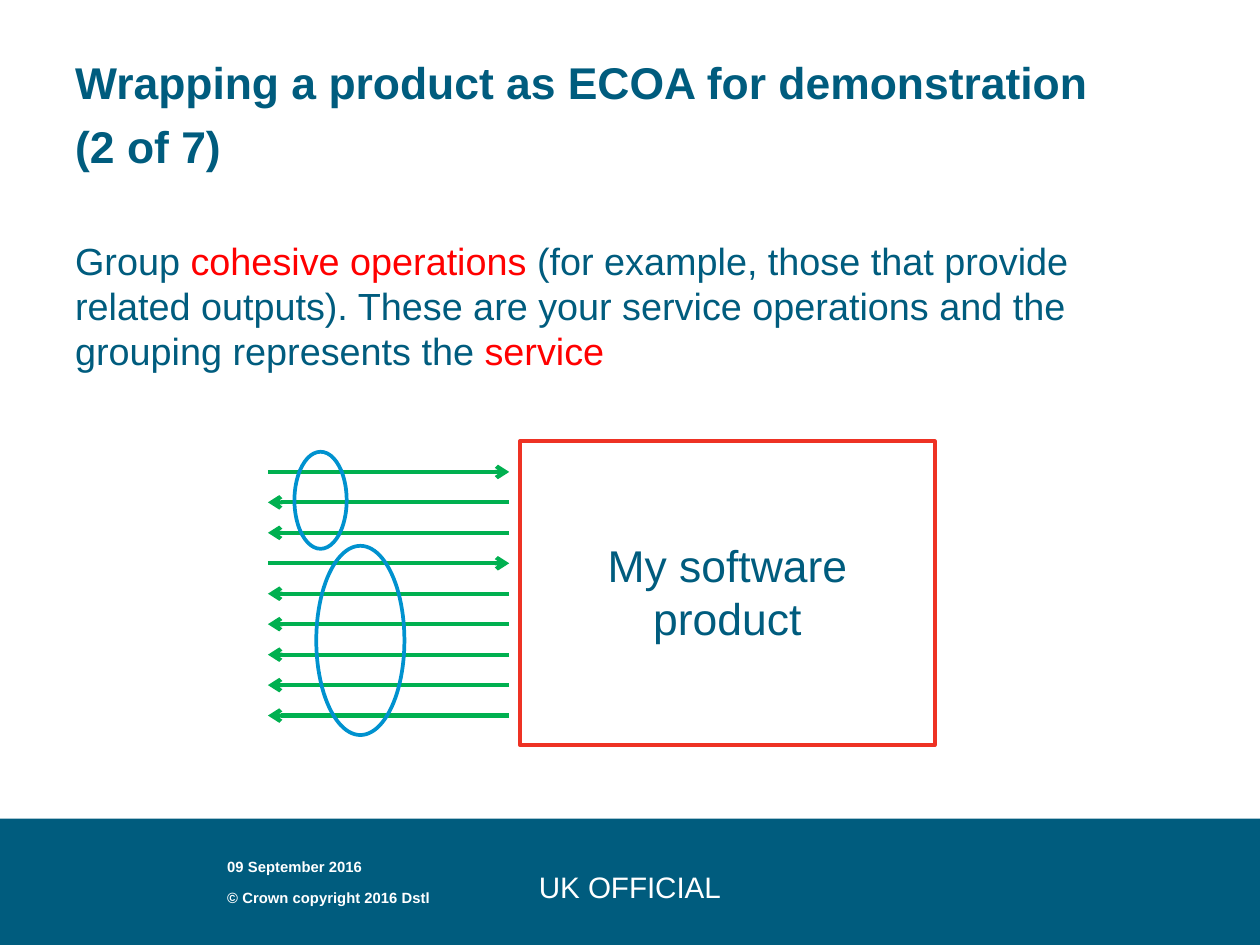
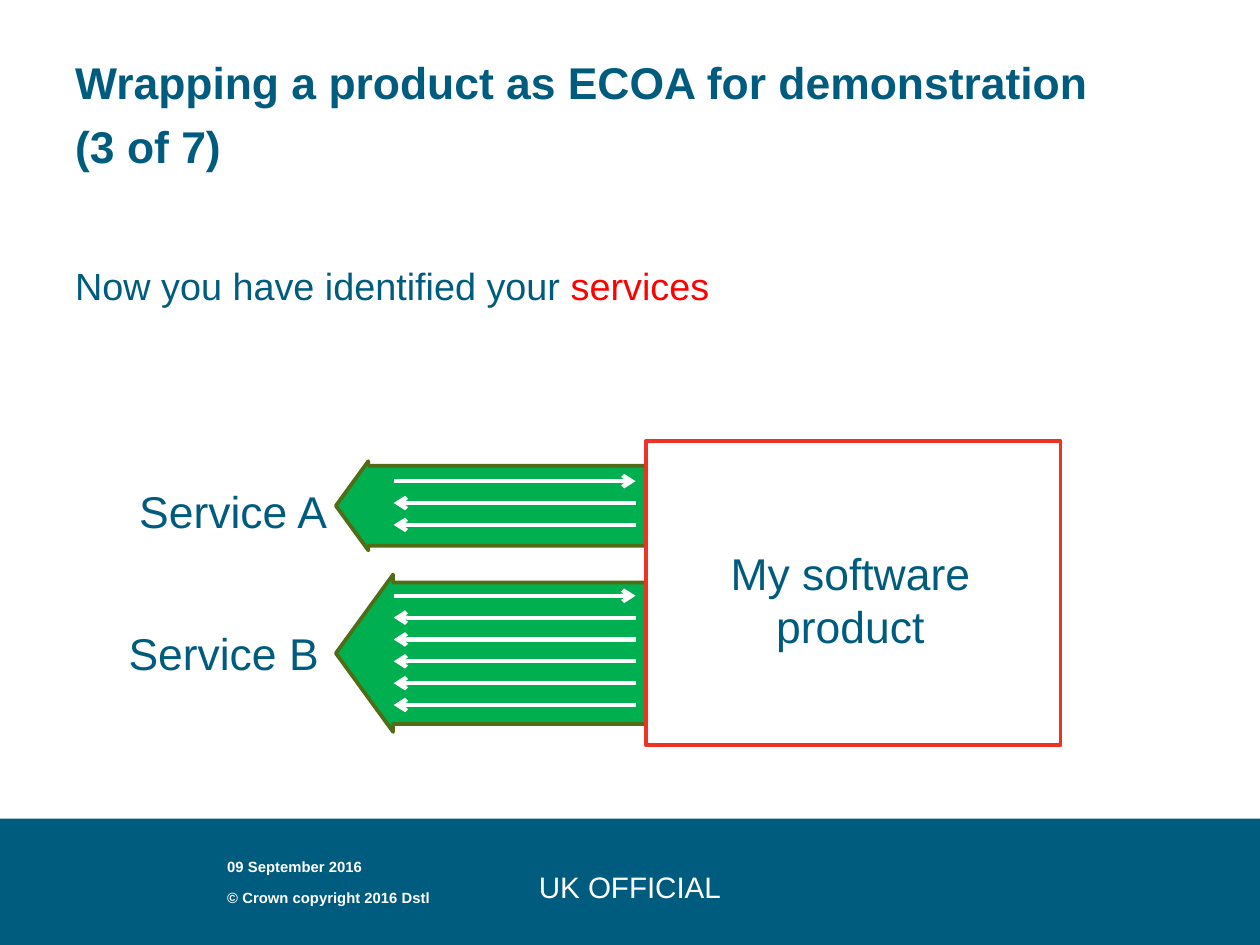
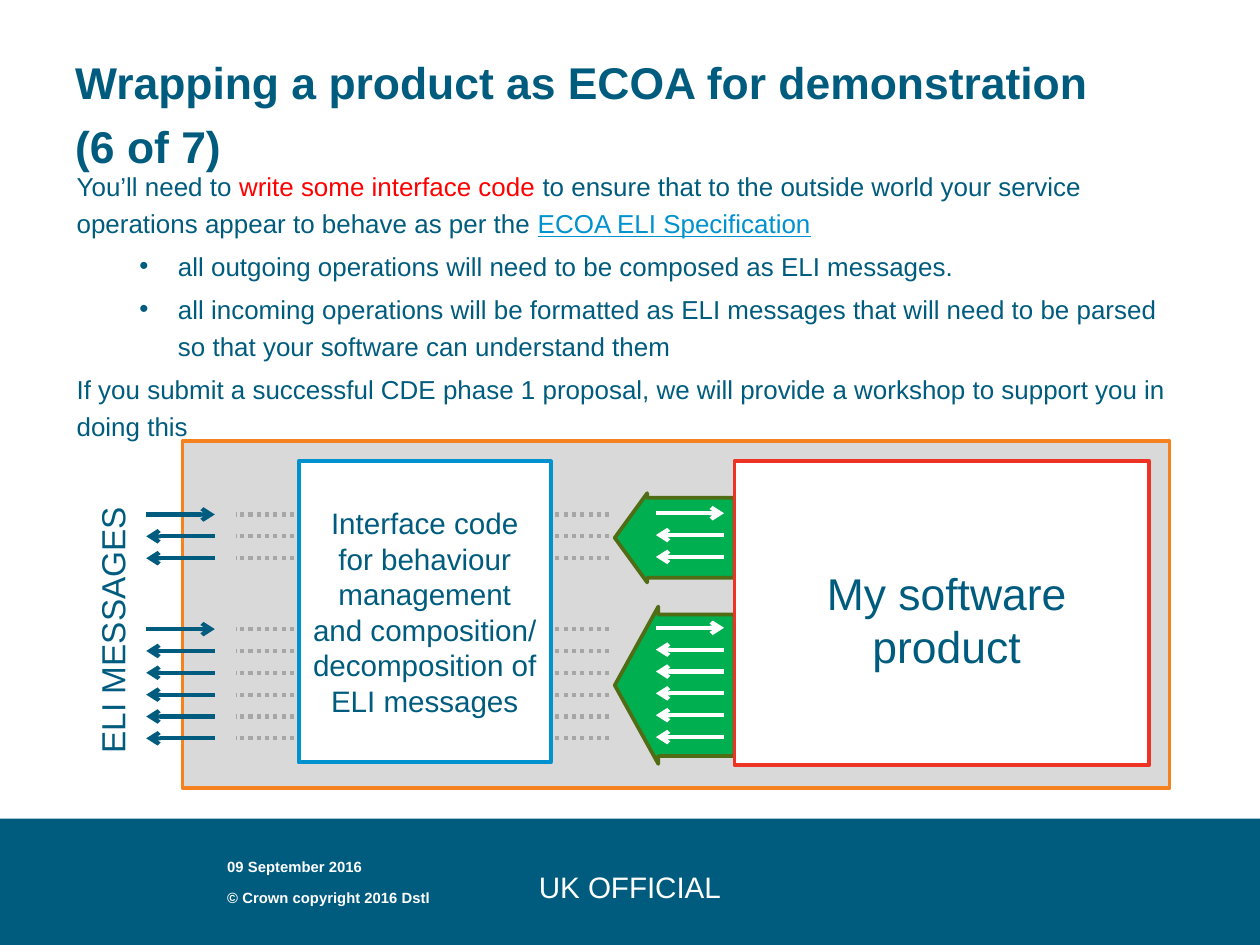
from dataclasses import dataclass

import pptx
import pptx.dml.color
import pptx.enum.dml
import pptx.enum.shapes
import pptx.enum.text
import pptx.oxml
import pptx.oxml.ns
import pptx.presentation
import pptx.shapes.autoshape
import pptx.shapes.base
import pptx.slide
import pptx.text.text
import pptx.util

Pt = pptx.util.Pt
SHAPE = pptx.enum.shapes.MSO_SHAPE
ALIGN = pptx.enum.text.PP_ALIGN
ANCHOR = pptx.enum.text.MSO_ANCHOR
SYS_DOT = pptx.enum.dml.MSO_LINE.ROUND_DOT

COLOURS = {
    "petrol": "005C7E", "white": "FFFFFF", "emphasis": "FF0000",
    "green": "00B050", "olive": "506D15", "red": "EE3224",
    "blue": "0092CF", "orange": "F5821F", "pale grey": "D9D9D9",
    "dot grey": "A6A6A6",
}
FONT = "Arial"
SLIDE_WIDTH, SLIDE_HEIGHT = 680.4, 510.4
BAND_TOP, BAND_HEIGHT = 442.2, 68.2
INSETS = {"margin_left": 6.8, "margin_right": 6.8,
          "margin_top": 3.6, "margin_bottom": 3.6}
BODY_SIZE, LABEL_SIZE, LABEL_LEADING = 20.4, 24, Pt(28.5)
OUTLINE_WIDTH, ARROW_WIDTH = 2, 2.25
PRODUCT_WIDTH, PRODUCT_HEIGHT, PRODUCT_LABEL_WIDTH = 224, 164.2, 160
SERVICE_SIZES = (3, 6)      # operations in service A and service B
SERVICE_HEIGHTS = (48.2, 85)
SERVICE_OFFSET = 61.2       # from the top of service A to that of service B
ROW_STEP, ROW_OFFSET = 11.8, 61.9


@dataclass(frozen=True)
class Box:
    left: float
    top: float
    width: float
    height: float

    def lengths(self) -> tuple[pptx.util.Length, ...]:
        return Pt(self.left), Pt(self.top), Pt(self.width), Pt(self.height)


@dataclass(frozen=True)
class Span:
    text: str
    colour: str = "petrol"
    underline: bool = False


@dataclass(frozen=True)
class Para:
    spans: tuple[Span, ...]
    bullet: bool = False


@dataclass(frozen=True)
class Style:
    size: float
    bold: bool = False
    align: ALIGN = ALIGN.LEFT
    anchor: ANCHOR = ANCHOR.TOP
    leading: float | pptx.util.Length = 1.0
    before: float = 0


@dataclass(frozen=True)
class Operation:
    y: float
    incoming: bool


TITLE = Style(24, bold=True, leading=1.2)
BODY = Style(BODY_SIZE)
DETAIL = Style(14, leading=1.2, before=3)
LABEL = Style(LABEL_SIZE, leading=LABEL_LEADING)
PRODUCT_LABEL = Style(LABEL_SIZE, align=ALIGN.CENTER, leading=LABEL_LEADING)
MESSAGES_LABEL = Style(18, leading=LABEL_LEADING)
INTERFACE_LABEL = Style(16, align=ALIGN.CENTER, anchor=ANCHOR.MIDDLE)
MARKING = Style(16, align=ALIGN.CENTER, anchor=ANCHOR.MIDDLE, leading=Pt(24))
DATE = Style(8, bold=True, anchor=ANCHOR.BOTTOM)
COPYRIGHT = Style(8, bold=True)


def rgb(colour: str) -> pptx.dml.color.RGBColor:
    return pptx.dml.color.RGBColor.from_string(COLOURS[colour])


def plain(text: str, colour: str = "petrol") -> tuple[Para, ...]:
    return (Para((Span(text, colour),)),)


# Text
def add_bullet(paragraph: pptx.text.text._Paragraph) -> None:
    paragraph.level = 1
    properties = paragraph._p.get_or_add_pPr()
    properties.set("marL", str(Pt(54.7)))
    properties.set("indent", str(Pt(-20.9)))
    for mark in (f'buFont {{}} typeface="{FONT}"', 'buChar {} char="•"'):
        properties.append(pptx.oxml.parse_xml(
            f'<a:{mark.format(pptx.oxml.ns.nsdecls("a"))}/>'))


def add_span(paragraph: pptx.text.text._Paragraph, span: Span,
             style: Style) -> None:
    """Add the span's runs, with a line break for each newline."""
    look = {"name": FONT, "size": Pt(style.size), "bold": style.bold,
            "underline": span.underline}
    for index, line in enumerate(span.text.split("\n")):
        if index:
            paragraph.add_line_break()
        run = paragraph.add_run()
        run.text = line
        for name, value in look.items():
            setattr(run.font, name, value)
        run.font.color.rgb = rgb(span.colour)


def write(frame: pptx.text.text.TextFrame, paras: tuple[Para, ...],
          style: Style) -> None:
    frame.word_wrap = True
    frame.auto_size = pptx.enum.text.MSO_AUTO_SIZE.NONE
    frame.vertical_anchor = style.anchor
    for side, length in INSETS.items():
        setattr(frame, side, Pt(length))
    for index, para in enumerate(paras):
        paragraph = frame.add_paragraph() if index else frame.paragraphs[0]
        if para.bullet:
            add_bullet(paragraph)
        layout = {"alignment": style.align, "line_spacing": style.leading,
                  "space_before": Pt(style.before if index else 0)}
        for name, value in layout.items():
            setattr(paragraph, name, value)
        for span in para.spans:
            add_span(paragraph, span, style)


def add_text(slide: pptx.slide.Slide, box: Box, paras: tuple[Para, ...],
             style: Style) -> pptx.shapes.base.BaseShape:
    holder = slide.shapes.add_textbox(*box.lengths())
    write(holder.text_frame, paras, style)
    return holder


# Shapes and lines
def add_outline(slide: pptx.slide.Slide, kind: SHAPE, box: Box,
                fill: str | None, line: str | None
                ) -> pptx.shapes.autoshape.Shape:
    outline = slide.shapes.add_shape(kind, *box.lengths())
    outline.shadow.inherit = False
    if fill:
        outline.fill.solid()
        outline.fill.fore_color.rgb = rgb(fill)
    else:
        outline.fill.background()
    if line:
        outline.line.color.rgb = rgb(line)
        outline.line.width = Pt(OUTLINE_WIDTH)
    else:
        outline.line.fill.background()
    return outline


def add_line(slide: pptx.slide.Slide, start: float, end: float, y: float,
             colour: str, dotted: bool = False) -> None:
    """Draw a level line: dotted, or with an arrowhead at its end."""
    link = slide.shapes.add_connector(
        pptx.enum.shapes.MSO_CONNECTOR.STRAIGHT,
        Pt(start), Pt(y), Pt(end), Pt(y))
    link.line.color.rgb = rgb(colour)
    link.line.width = Pt(ARROW_WIDTH)
    namespace = pptx.oxml.ns.nsdecls("a")
    if dotted:
        link.line.dash_style = SYS_DOT
    else:
        link.line._get_or_add_ln().append(
            pptx.oxml.parse_xml(f'<a:tailEnd {namespace} type="arrow"/>'))
    link._element.spPr.append(
        pptx.oxml.parse_xml(f"<a:effectLst {namespace}/>"))


# Parts of the diagrams
def operations(top: float, step: float = ROW_STEP,
               offset: float = ROW_OFFSET) -> list[Operation]:
    """The first operation of each service comes in, the others go out."""
    return [Operation(top + service * offset + row * step, row == 0)
            for service, size in enumerate(SERVICE_SIZES)
            for row in range(size)]


def add_operations(slide: pptx.slide.Slide, rows: list[Operation],
                   left: float, right: float, colour: str) -> None:
    for row in rows:
        start, end = (left, right) if row.incoming else (right, left)
        add_line(slide, start, end, row.y, colour)


def add_services(slide: pptx.slide.Slide, left: float, right: float,
                 top: float) -> None:
    for index, height in enumerate(SERVICE_HEIGHTS):
        box = Box(left, top + index * SERVICE_OFFSET, right - left, height)
        service = add_outline(slide, SHAPE.LEFT_ARROW, box, "green", "olive")
        service.adjustments[0] = 0.898
        service.adjustments[1] = 0.364


def add_product(slide: pptx.slide.Slide, left: float, top: float,
                label_drop: float, label_shift: float = 0) -> None:
    add_outline(slide, SHAPE.RECTANGLE,
                Box(left, top, PRODUCT_WIDTH, PRODUCT_HEIGHT), "white", "red")
    label_left = left + (PRODUCT_WIDTH - PRODUCT_LABEL_WIDTH) / 2 + label_shift
    add_text(slide, Box(label_left, top + label_drop, PRODUCT_LABEL_WIDTH, 65.5),
             plain("My software product"), PRODUCT_LABEL)


# Title, band and footers shared by all slides
def start_slide(deck: pptx.presentation.Presentation,
                number: int) -> pptx.slide.Slide:
    slide = deck.slides.add_slide(deck.slide_layouts.get_by_name("Title Only"))
    title = slide.shapes.title
    place = dict(zip(("left", "top", "width", "height"),
                     Box(33.8, 20.2, 612, 85).lengths()))
    for name, value in place.items():
        setattr(title, name, value)
    heading = f"Wrapping a product as ECOA for demonstration\n({number} of 7)"
    write(title.text_frame, plain(heading), TITLE)
    add_outline(slide, SHAPE.RECTANGLE,
                Box(0, BAND_TOP, SLIDE_WIDTH, BAND_HEIGHT), "petrol", None)
    footers = (
        (Box(246.6, 442.6, 187.2, 68), "UK OFFICIAL", MARKING),
        (Box(115.9, 476.2, 130.3, 22.3), "© Crown copyright 2016 Dstl",
         COPYRIGHT),
        (Box(115.9, 453.9, 130.3, 22.3), "09 September 2016", DATE),
    )
    for box, text, style in footers:
        add_text(slide, box, plain(text, "white"), style)
    return slide


def grouping_slide(deck: pptx.presentation.Presentation) -> None:
    slide = start_slide(deck, 2)
    add_text(slide, Box(33.8, 124.6, 612, 85), (Para((
        Span("Group "),
        Span("cohesive operations ", "emphasis"),
        Span("(for example, those that provide related outputs). These are "
             "your service operations and the grouping represents the "),
        Span("service", "emphasis"),
    )),), BODY)
    add_product(slide, 280.8, 238.3, 49)
    step = 16.45
    rows = operations(254.9, step, SERVICE_SIZES[0] * step)
    add_operations(slide, rows, 144.7, 275, "green")
    for group in (Box(159, 244, 28.2, 52.4), Box(170.8, 294.8, 47.6, 102.2)):
        add_outline(slide, SHAPE.OVAL, group, None, "blue")


def services_slide(deck: pptx.presentation.Presentation) -> None:
    slide = start_slide(deck, 3)
    add_text(slide, Box(33.8, 138.2, 612, 32), (Para((
        Span("Now you have identified your "),
        Span("services", "emphasis"),
    )),), BODY)
    product_left = 348.7
    add_services(slide, 181.4, product_left, 249.1)
    add_product(slide, product_left, 238.3, 53.3, label_shift=-1.5)
    add_operations(slide, operations(259.9), 212.6, 343.2, "white")
    add_text(slide, Box(68.4, 258.2, 116, 36.7), plain("Service A"), LABEL)
    add_text(slide, Box(62.6, 334.8, 121.7, 36.7), plain("Service B"), LABEL)


def interface_slide(deck: pptx.presentation.Presentation) -> None:
    slide = start_slide(deck, 6)
    add_outline(slide, SHAPE.RECTANGLE, Box(98.6, 238.3, 533, 187.2),
                "pale grey", "orange")
    product_left = 396.7
    add_services(slide, 332, product_left, 266.4)
    add_product(slide, product_left, 249.1, 53.3, label_shift=2.5)
    add_operations(slide, operations(277.2), 354.2, 391, "white")
    message_rows = operations(277.9)
    add_operations(slide, message_rows, 79, 116, "petrol")
    for row in message_rows:
        add_line(slide, 329, 127.4, row.y, "dot grey", dotted=True)
    interface = add_outline(slide, SHAPE.RECTANGLE,
                            Box(161.3, 249.1, 136.1, 162.7), "white", "blue")
    write(interface.text_frame,
          plain("Interface code for behaviour management and composition/ "
                "decomposition of ELI messages"), INTERFACE_LABEL)
    messages = add_text(slide, Box(-21.6, 316.1, 158.4, 36.7),
                        plain("ELI MESSAGES"), MESSAGES_LABEL)
    messages.rotation = 270
    add_text(slide, Box(34.6, 85, 612, 141.8), (
        Para((
            Span("You’ll need to "),
            Span("write some interface code ", "emphasis"),
            Span("to ensure that to the outside world your service operations "
                 "appear to behave as per the "),
            Span("ECOA ELI Specification", "blue", underline=True),
        )),
        Para((Span("all outgoing operations will need to be composed as ELI "
                   "messages."),), bullet=True),
        Para((Span("all incoming operations will be formatted as ELI messages "
                   "that will need to be parsed so that your software can "
                   "understand them"),), bullet=True),
        Para((Span("If you submit a successful CDE phase 1 proposal, we will "
                   "provide a workshop to support you in doing this"),)),
    ), DETAIL)


def main() -> None:
    deck = pptx.Presentation()
    deck.slide_width, deck.slide_height = Pt(SLIDE_WIDTH), Pt(SLIDE_HEIGHT)
    for build in (grouping_slide, services_slide, interface_slide):
        build(deck)
    deck.save("out.pptx")


if __name__ == "__main__":
    main()
